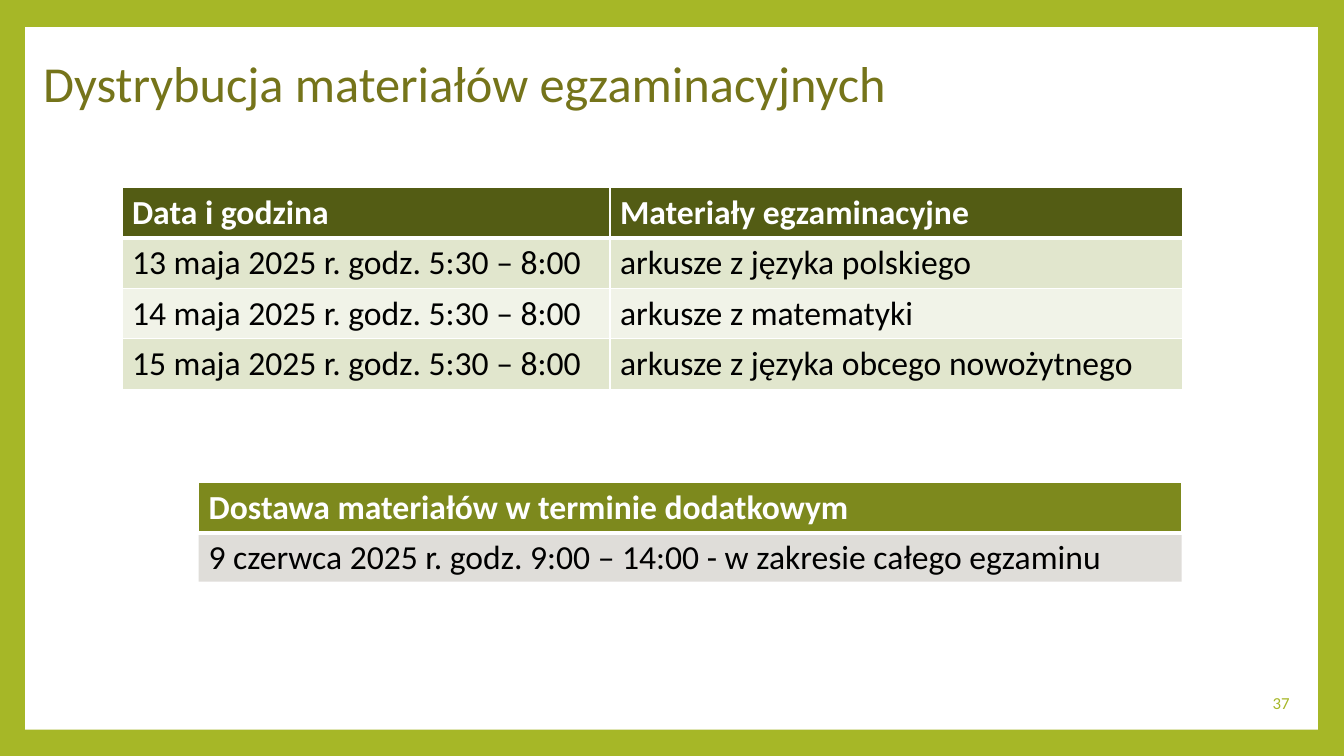
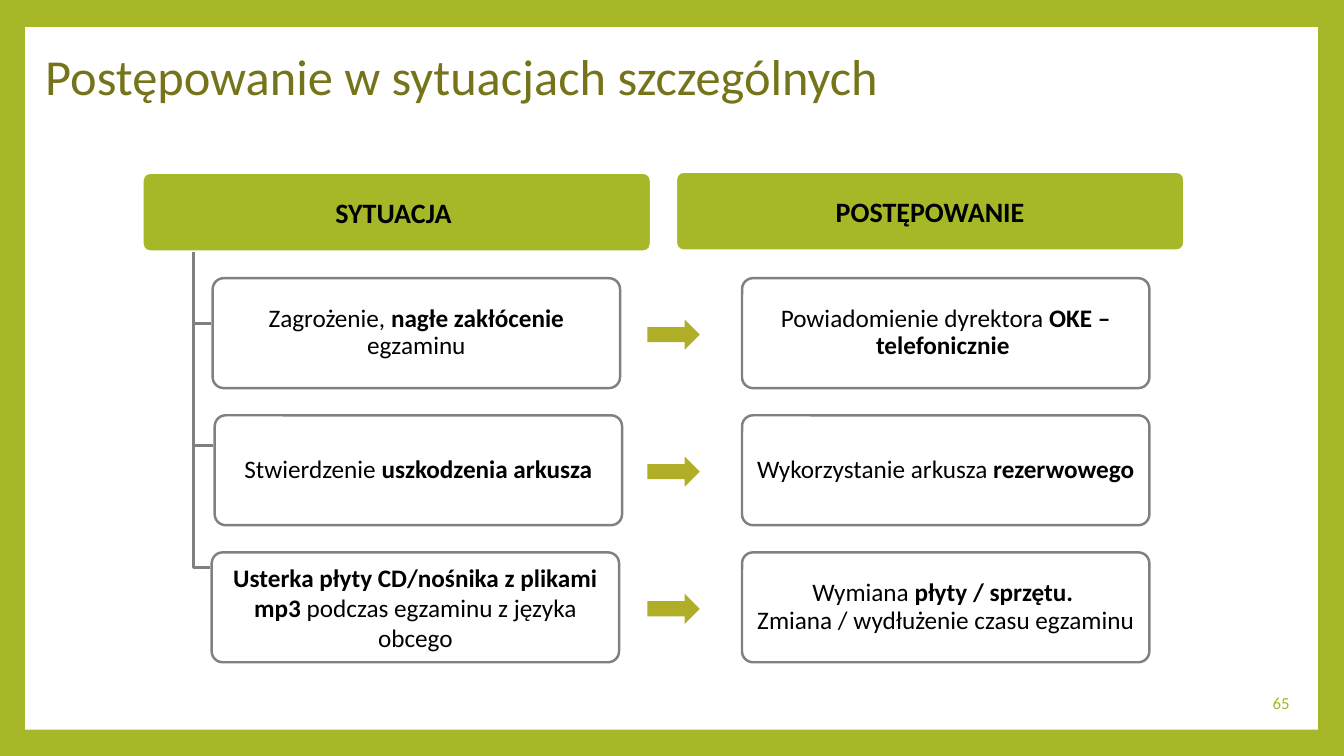
from dataclasses import dataclass

from lxml.etree import SubElement
from pptx import Presentation
from pptx.dml.color import RGBColor
from pptx.enum.shapes import MSO_SHAPE as Shape
from pptx.enum.text import MSO_ANCHOR as Anchor, PP_ALIGN as Align
from pptx.oxml.ns import qn
from pptx.util import Inches, Pt


@dataclass(frozen=True)
class Theme:
    font: str = "Calibri"
    # Colours
    lime: str = "A6B727"
    title: str = "75741A"
    dark_olive: str = "535C14"
    olive: str = "7D891D"
    band_dark: str = "E1E6CD"
    band_light: str = "F1F3E8"
    stone: str = "DFDDD9"
    arrow: str = "B0AD26"
    grey: str = "808080"
    white: str = "FFFFFF"
    black: str = "000000"
    # Type sizes
    title_size: int = 36
    table_size: int = 24
    heading_size: int = 20
    card_size: int = 18
    number_size: int = 12


THEME = Theme()
ROW_HEIGHT = 0.5
CARD_SIZE = (4.04, 1.09)
CARD_TOP, CARD_STEP = 2.76, 1.36
TRUNK_X, TRUNK_TOP = 1.92, 2.5
BRANCH_TOP, BRANCH_STEP = 3.21, 1.21


def color(value):
    return RGBColor.from_string(value)


def inches(*values):
    return [Inches(value) for value in values]


# Text
def write(frame, paragraphs, size, ink, align=Align.LEFT, spacing=None):
    """Each paragraph is a list of (text, bold) runs."""
    frame.word_wrap = True
    for index, runs in enumerate(paragraphs):
        paragraph = frame.add_paragraph() if index else frame.paragraphs[0]
        paragraph.alignment = align
        if spacing:
            paragraph.line_spacing = spacing
        for text, bold in runs:
            run = paragraph.add_run()
            run.text = text
            run.font.name = THEME.font
            run.font.size = Pt(size)
            run.font.bold = bold
            run.font.color.rgb = color(ink)


def add_label(slide, box, text, size, ink, **style):
    frame = slide.shapes.add_textbox(*inches(*box)).text_frame
    frame.vertical_anchor = Anchor.MIDDLE
    write(frame, [[(text, False)]], size, ink, **style)


# Shapes
def add_block(slide, kind, box, fill, line=None, weight=1.75):
    shape = slide.shapes.add_shape(kind, *inches(*box))
    shape.shadow.inherit = False
    shape.fill.solid()
    shape.fill.fore_color.rgb = color(fill)
    if line:
        shape.line.color.rgb = color(line)
        shape.line.width = Pt(weight)
    else:
        shape.line.fill.background()
    return shape


def add_rounded(slide, box, paragraphs, size, fill, line, weight=1.75, spacing=None):
    shape = add_block(slide, Shape.ROUNDED_RECTANGLE, box, fill, line, weight)
    shape.adjustments[0] = 0.1
    frame = shape.text_frame
    frame.vertical_anchor = Anchor.MIDDLE
    frame.margin_left = frame.margin_right = Inches(0.04)
    frame.margin_top = frame.margin_bottom = Inches(0.03)
    write(frame, paragraphs, size, THEME.black, Align.CENTER, spacing)


def add_branch(slide, end_x, end_y):
    start, corner, end = (inches(*point) for point in (
        (TRUNK_X, TRUNK_TOP), (TRUNK_X, end_y), (end_x, end_y)))
    builder = slide.shapes.build_freeform(*start)
    builder.add_line_segments([corner, end], close=False)
    branch = builder.convert_to_shape()
    branch.shadow.inherit = False
    branch.fill.background()
    branch.line.color.rgb = color(THEME.grey)
    branch.line.width = Pt(1.75)


# Tables
def set_borders(cell, top, bottom):
    properties = cell._tc.get_or_add_tcPr()
    for side, width in (("L", 1), ("R", 1), ("T", top), ("B", bottom)):
        line = SubElement(properties, qn(f"a:ln{side}"), w=str(Pt(width)))
        fill = SubElement(line, qn("a:solidFill"))
        SubElement(fill, qn("a:srgbClr"), val=THEME.white)


def add_table(slide, left, top, widths, rows, header_fill):
    frame = slide.shapes.add_table(
        len(rows), len(widths), *inches(left, top, sum(widths), ROW_HEIGHT * len(rows)))
    table = frame.table
    table.horz_banding = False
    for column, width in zip(table.columns, widths):
        column.width = Inches(width)
    for row_index, values in enumerate(rows):
        table.rows[row_index].height = Inches(ROW_HEIGHT)
        header = row_index == 0
        band = THEME.band_dark if row_index % 2 else THEME.band_light
        for column_index, text in enumerate(values):
            cell = table.cell(row_index, column_index)
            set_borders(cell, 3 if row_index == 1 else 1, 3 if header else 1)
            cell.fill.solid()
            cell.fill.fore_color.rgb = color(header_fill if header else band)
            write(cell.text_frame, [[(text, header)]], THEME.table_size,
                  THEME.white if header else THEME.black)


# Shared slide frame
def add_framed_slide(presentation, title, title_box, number):
    slide = presentation.slides.add_slide(presentation.slide_layouts[6])
    background = slide.background.fill
    background.solid()
    background.fore_color.rgb = color(THEME.lime)
    add_block(slide, Shape.RECTANGLE, (0.25, 0.27, 12.82, 6.97), THEME.white)
    add_label(slide, title_box, title, THEME.title_size, THEME.title, spacing=0.9)
    add_label(slide, (11.02, 6.77, 1.87, 0.4), number, THEME.number_size,
              THEME.lime, align=Align.RIGHT)
    return slide


def build_distribution(presentation):
    slide = add_framed_slide(presentation, "Dystrybucja materiałów egzaminacyjnych",
                             (0.33, 0.16, 10.51, 1.4), "37")
    add_table(slide, 1.21, 1.86, (4.84, 5.68), [
        ("Data i godzina", "Materiały egzaminacyjne"),
        ("13 maja 2025 r. godz. 5:30 – 8:00", "arkusze z języka polskiego"),
        ("14 maja 2025 r. godz. 5:30 – 8:00", "arkusze z matematyki"),
        ("15 maja 2025 r. godz. 5:30 – 8:00", "arkusze z języka obcego nowożytnego"),
    ], THEME.dark_olive)

    # Additional delivery date
    date = add_block(slide, Shape.RECTANGLE, (1.97, 5.27, 9.75, 0.5), THEME.stone)
    date.text_frame.vertical_anchor = Anchor.TOP
    write(date.text_frame,
          [[("9 czerwca 2025 r. godz. 9:00 – 14:00 - w zakresie całego egzaminu", False)]],
          THEME.table_size, THEME.black)
    add_table(slide, 1.97, 4.79, (9.75,),
              [("Dostawa materiałów w terminie dodatkowym",)], THEME.olive)


def build_procedures(presentation):
    slide = add_framed_slide(presentation, "Postępowanie w sytuacjach szczególnych",
                             (0.35, 0.21, 11.08, 1.16), "65")
    # Column headings
    for left, top, text in ((1.41, 1.71, "SYTUACJA "), (6.7, 1.7, "POSTĘPOWANIE")):
        add_rounded(slide, (left, top, 5.05, 0.79), [[(text, True)]],
                    THEME.heading_size, THEME.lime, THEME.white, 2.25)

    # Situation left edge, situation line spacing, situation, response
    pairs = [
        (2.11, 0.9,
         [[("Zagrożenie, ", False), ("nagłe zakłócenie ", True), ("egzaminu", False)]],
         [[("Powiadomienie dyrektora ", False), ("OKE – telefonicznie ", True)]]),
        (2.13, 0.9,
         [[("Stwierdzenie ", False), ("uszkodzenia arkusza", True)]],
         [[("Wykorzystanie arkusza ", False), ("rezerwowego", True)]]),
        (2.1, 1.0,
         [[("Usterka płyty CD/nośnika z plikami mp3 ", True),
           ("podczas egzaminu z języka obcego", False)]],
         [[("Wymiana ", False), ("płyty / sprzętu. ", True)],
          [("Zmiana / wydłużenie czasu egzaminu", False)]]),
    ]
    for index, (left, spacing, situation, response) in enumerate(pairs):
        top = CARD_TOP + index * CARD_STEP
        add_branch(slide, left - 0.02, BRANCH_TOP + index * BRANCH_STEP)
        for card_left, text, leading in ((left, situation, spacing), (7.36, response, 0.9)):
            add_rounded(slide, (card_left, top, *CARD_SIZE), text, THEME.card_size,
                        THEME.white, THEME.grey, spacing=leading)
        add_block(slide, Shape.RIGHT_ARROW, (6.42, top + 0.41, 0.52, 0.3), THEME.arrow)


def main():
    presentation = Presentation()
    presentation.slide_width, presentation.slide_height = inches(13.33, 7.5)
    build_distribution(presentation)
    build_procedures(presentation)
    presentation.save("out.pptx")


if __name__ == "__main__":
    main()
